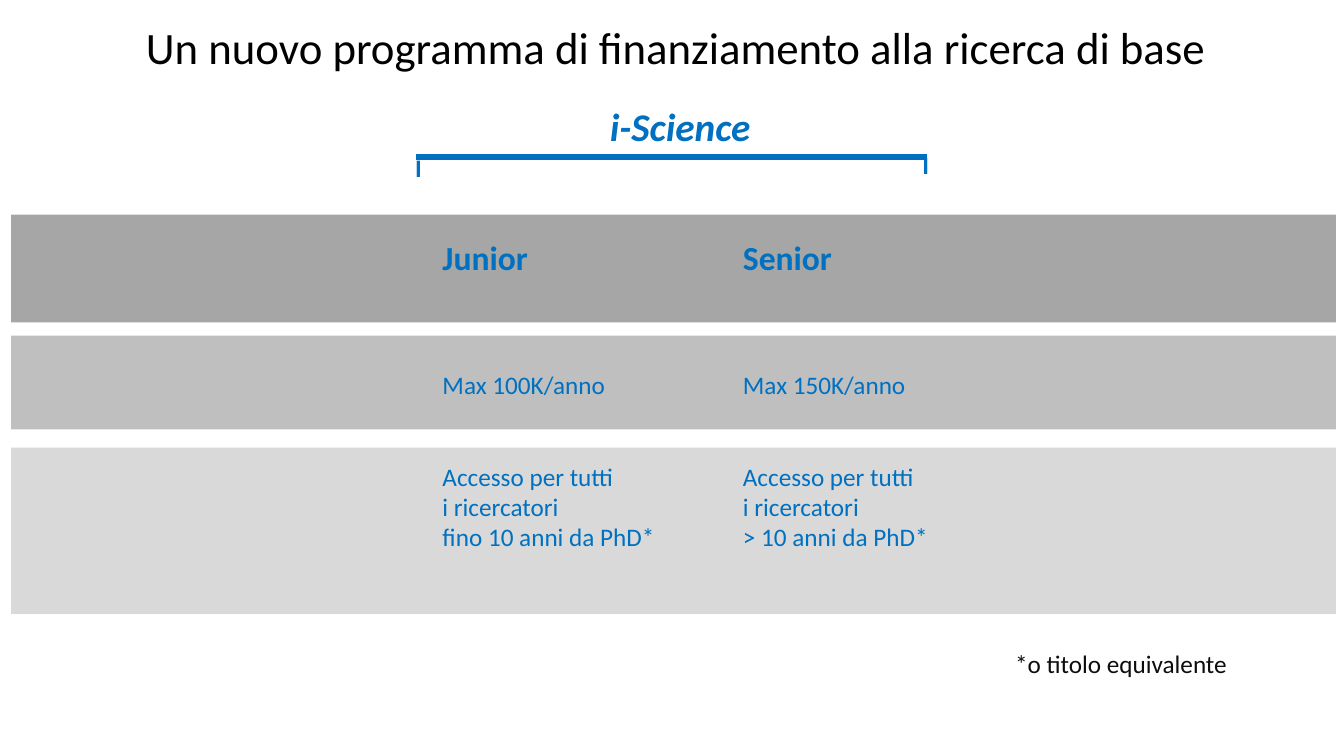
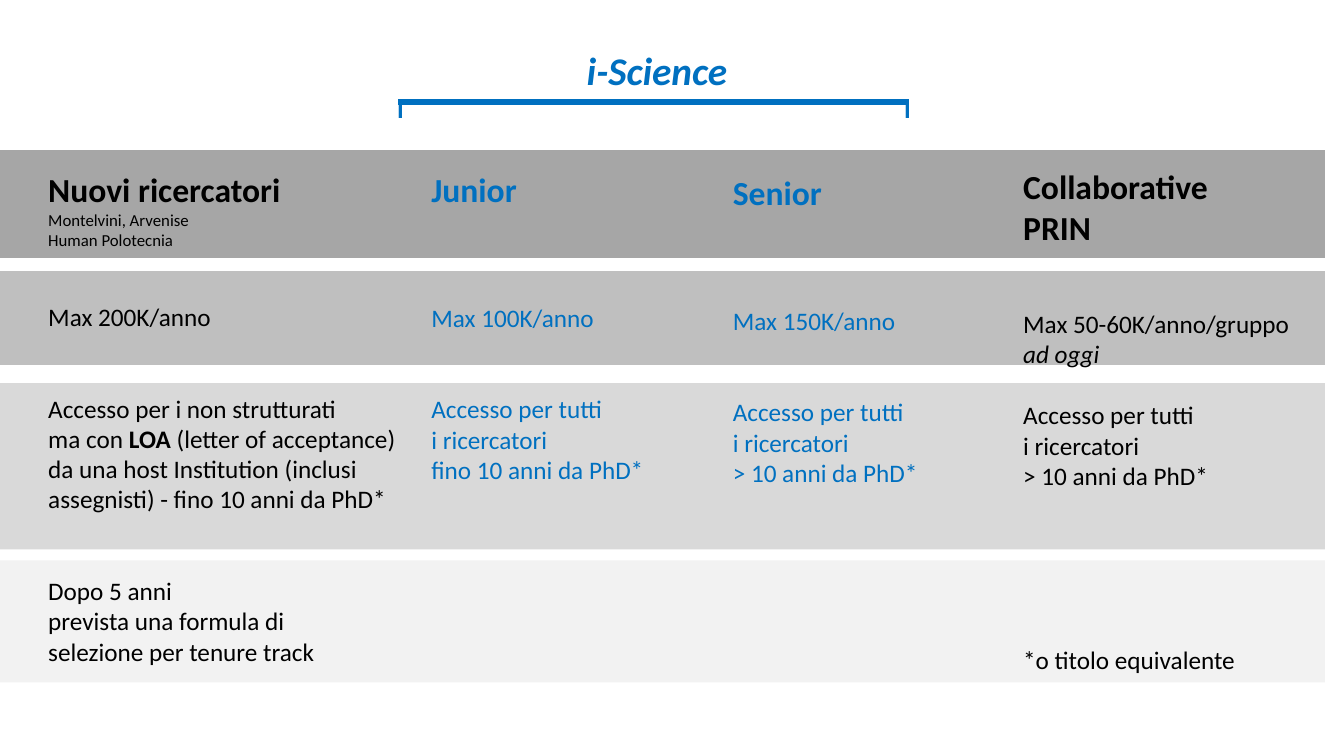
"""Build two slides on the i-Science funding programme."""
from dataclasses import dataclass

import lxml.etree
import pptx
import pptx.dml.color
import pptx.enum.shapes
import pptx.enum.text
import pptx.oxml.ns
import pptx.slide
import pptx.util

RGB = pptx.dml.color.RGBColor
BLUE = RGB(0x00, 0x70, 0xC0)
BLACK = RGB(0x00, 0x00, 0x00)
INK = RGB(0x0D, 0x0D, 0x0D)
GREYS = (
    RGB(0xA6, 0xA6, 0xA6),
    RGB(0xBF, 0xBF, 0xBF),
    RGB(0xD9, 0xD9, 0xD9),
    RGB(0xF2, 0xF2, 0xF2),
)
FONT = "Calibri"
SCALE = 9144
WIDE, HIGH = 1333, 750
BAND_WIDE = 1314
BANDS = ((0, 107), (120, 93), (231, 165), (407, 121))
ROW = 22


@dataclass(frozen=True)
class Box:
    """Place of an item in px."""
    left: int
    top: int
    width: int
    height: int


@dataclass(frozen=True)
class Line:
    """One paragraph, whose odd bits are bold."""
    bits: tuple[str, ...]
    size: int = 18
    bold: bool = False
    slant: bool = False
    gap: float = 0


@dataclass(frozen=True)
class Brace:
    """A titled bracket over the middle columns."""
    left: int
    right: int
    top: int
    title: Box
    ticks: tuple[Box, Box]


def px(size: int) -> pptx.util.Emu:
    """Turn px into EMU."""
    return pptx.util.Emu(size * SCALE)


def place(box: Box) -> tuple[pptx.util.Emu, ...]:
    """Turn a box into EMU lengths."""
    return px(box.left), px(box.top), px(box.width), px(box.height)


def row(text: str, gap: float = 0, slant: bool = False) -> Line:
    """Make a body line."""
    return Line((text,), gap=gap, slant=slant)


def head(text: str) -> Line:
    """Make a column heading."""
    return Line((text,), 24, True)


def access(last: str, gap: int) -> list[Line]:
    """Make the lines on who may apply."""
    return [row("Accesso per tutti", gap), row("i ricercatori"), row(last)]


def grade(name: str, funds: str, last: str) -> list[Line]:
    """Make the lines of a programme grade."""
    return [head(name), row(funds, 3 * ROW), *access(last, 2 * ROW)]


def write(
    slide: pptx.slide.Slide, box: Box, lines: list[Line],
    color: RGB = BLACK, wrap: bool = False,
) -> None:
    """Draw a text box."""
    frame = slide.shapes.add_textbox(*place(box)).text_frame
    frame.word_wrap = wrap
    frame.auto_size = pptx.enum.text.MSO_AUTO_SIZE.SHAPE_TO_FIT_TEXT
    for index, line in enumerate(lines):
        para = frame.add_paragraph() if index else frame.paragraphs[0]
        para.space_before = pptx.util.Pt(line.gap)
        font = para.font
        font.name, font.size = FONT, pptx.util.Pt(line.size)
        font.bold, font.italic = line.bold, line.slant
        font.color.rgb = color
        for spot, bit in enumerate(line.bits):
            run = para.add_run()
            run.text = bit
            if spot % 2:
                run.font.bold = True


def stripe(slide: pptx.slide.Slide, left: int, top: int, count: int) -> None:
    """Draw the grey bands."""
    for (drop, height), grey in zip(BANDS[:count], GREYS):
        band = slide.shapes.add_shape(
            pptx.enum.shapes.MSO_SHAPE.RECTANGLE,
            *place(Box(left, top + drop, BAND_WIDE, height)),
        )
        band.shadow.inherit = False
        band.fill.solid()
        band.fill.fore_color.rgb = grey
        band.line.fill.background()


def span(slide: pptx.slide.Slide, brace: Brace) -> None:
    """Draw the bracket and its title."""
    write(slide, brace.title, [Line(("i-Science",), 28, True, True)], BLUE)
    bar = slide.shapes.add_connector(
        pptx.enum.shapes.MSO_CONNECTOR.STRAIGHT,
        px(brace.left), px(brace.top), px(brace.right), px(brace.top),
    )
    bar.line.color.rgb = BLUE
    bar.line.width = pptx.util.Pt(4.5)
    lxml.etree.SubElement(
        bar._element.spPr, pptx.oxml.ns.qn("a:effectLst")
    )
    for tick in brace.ticks:
        write(slide, tick, [Line(("I",), bold=True)], BLUE)


JUNIOR = grade("Junior", "Max 100K/anno", "fino 10 anni da PhD*")
SENIOR = grade("Senior", "Max 150K/anno", "> 10 anni da PhD*")
NOTE = "*o titolo equivalente"
NOVEL = [
    head("Nuovi ricercatori"),
    Line(("Montelvini, Arvenise",), 12),
    Line(("Human Polotecnia",), 12),
    row("Max 200K/anno", 36.6),
    row("Accesso per i non strutturati", 2 * ROW),
    Line(("ma con ", "LOA", " (letter of acceptance)")),
    row("da una host Institution (inclusi"),
    row("assegnisti) - fino 10 anni da PhD*"),
    row("Dopo 5 anni", 2 * ROW),
    row("prevista una formula di"),
    row("selezione per tenure track"),
]
JOINT = [
    head("Collaborative"),
    head("PRIN"),
    row("Max 50-60K/anno/gruppo", 2 * ROW),
    row("ad oggi", slant=True),
    *access("> 10 anni da PhD*", ROW),
    row(NOTE, 5 * ROW),
]


def intro(slide: pptx.slide.Slide) -> None:
    """Draw the new programme."""
    stripe(slide, 11, 213, 3)
    span(slide, Brace(
        413, 919, 156, Box(595, 97, 161, 57),
        (Box(402, 146, 27, 40), Box(905, 143, 27, 40)),
    ))
    write(slide, Box(429, 230, 298, 353), JUNIOR, BLUE, True)
    write(slide, Box(727, 230, 206, 353), SENIOR, BLUE)
    title = "Un nuovo programma di finanziamento alla ricerca di base"
    write(slide, Box(135, 15, 1083, 64), [Line((title,), 32)])
    write(slide, Box(997, 638, 233, 71), [row(NOTE)], INK)


def scheme(slide: pptx.slide.Slide) -> None:
    """Draw all four funding lines."""
    stripe(slide, 0, 149, 4)
    write(slide, Box(38, 163, 369, 505), NOVEL)
    write(slide, Box(418, 163, 234, 323), JUNIOR, BLUE)
    write(slide, Box(717, 166, 206, 323), SENIOR, BLUE)
    write(slide, Box(1005, 160, 287, 515), JOINT)
    span(slide, Brace(
        395, 902, 101, Box(572, 41, 161, 57),
        (Box(384, 88, 27, 40), Box(887, 88, 27, 40)),
    ))


def main() -> None:
    """Build and save the deck."""
    deck = pptx.Presentation()
    deck.slide_width, deck.slide_height = px(WIDE), px(HIGH)
    for draw in (intro, scheme):
        draw(deck.slides.add_slide(deck.slide_layouts[6]))
    deck.save("out.pptx")


if __name__ == "__main__":
    main()
